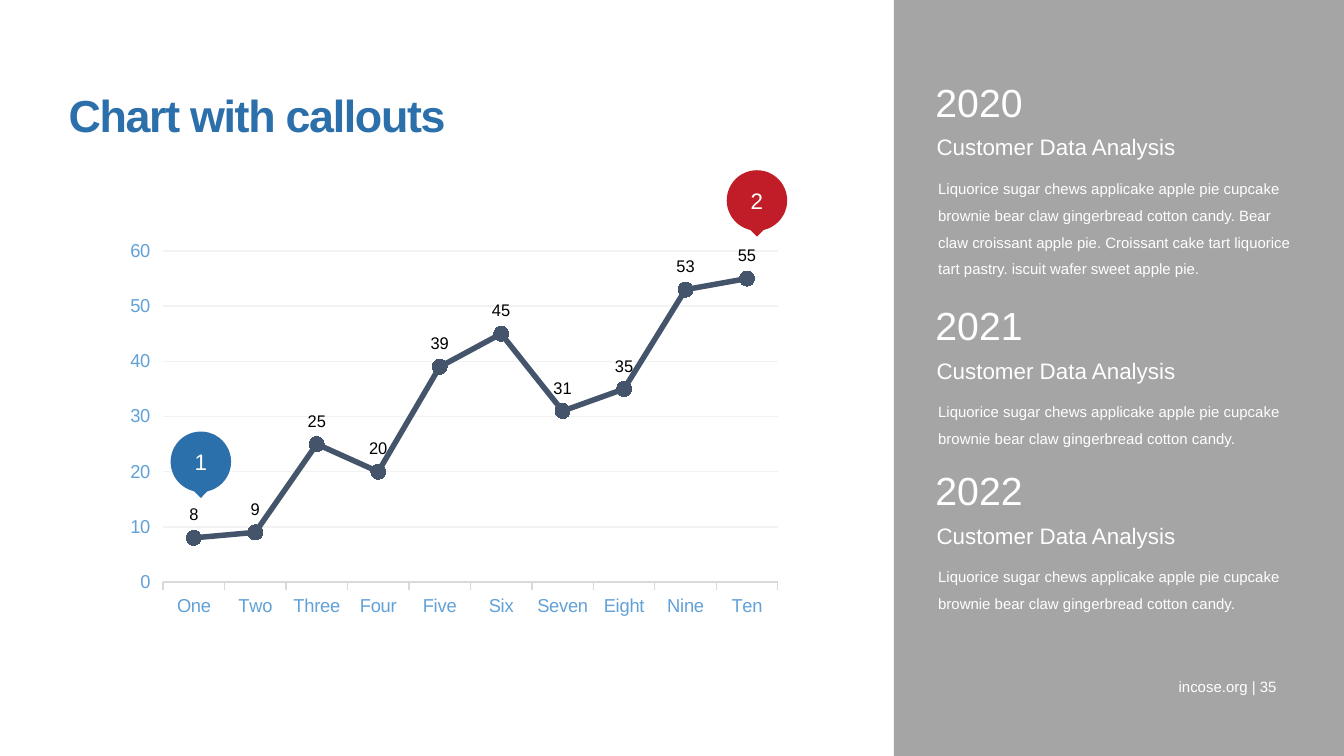
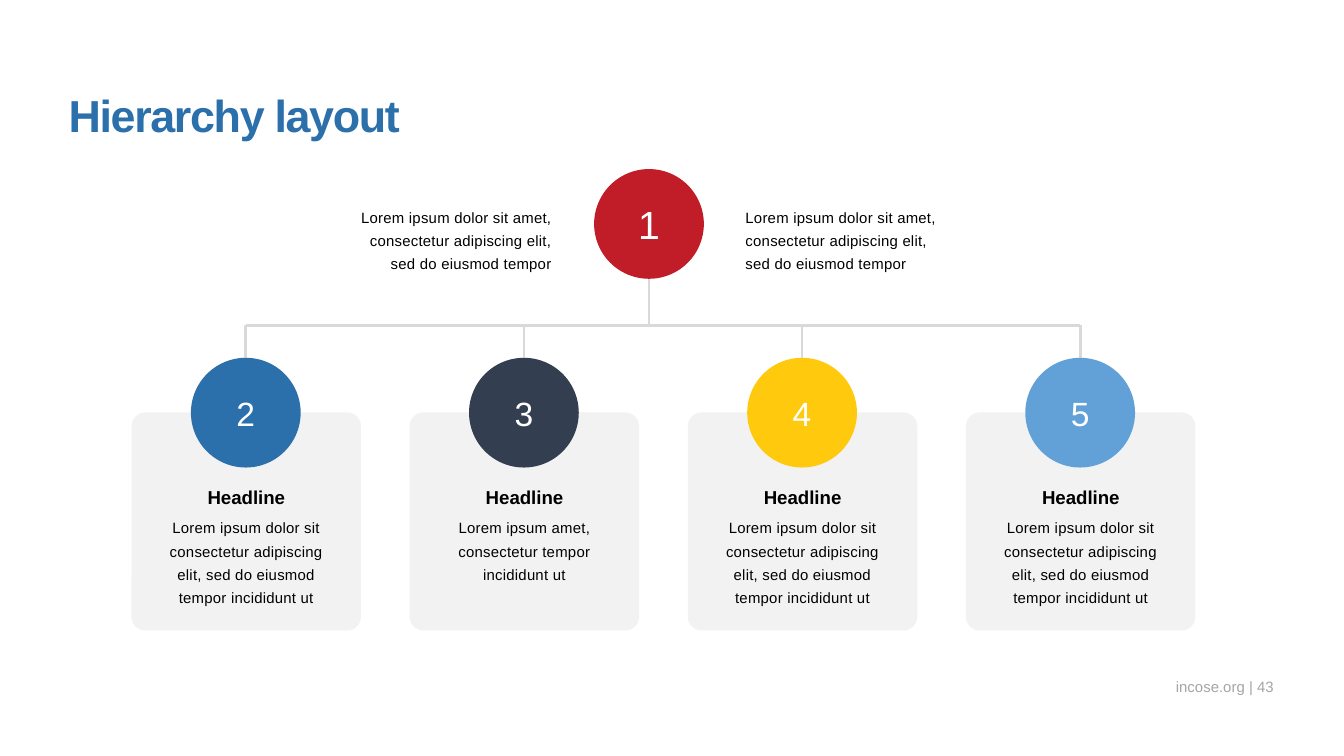
from pptx import Presentation
from pptx.chart.data import CategoryChartData
from pptx.dml.color import RGBColor
from pptx.enum.chart import XL_CHART_TYPE as ChartType
from pptx.enum.chart import XL_LABEL_POSITION as LabelPosition
from pptx.enum.chart import XL_MARKER_STYLE as MarkerStyle
from pptx.enum.chart import XL_TICK_MARK as TickMark
from pptx.enum.shapes import MSO_CONNECTOR as Connector
from pptx.enum.shapes import MSO_SHAPE as Shape
from pptx.enum.text import MSO_ANCHOR as Anchor
from pptx.enum.text import PP_ALIGN as Align
from pptx.oxml import parse_xml
from pptx.oxml.ns import nsdecls
from pptx.oxml.xmlchemy import OxmlElement
from pptx.util import Pt

FONT = "Arial"
COLORS = {
    "white": "FFFFFF", "black": "000000", "gray": "A5A5A5", "blue": "2B6FAB",
    "red": "C01D28", "yellow": "FFC90E", "sky": "61A1D7", "navy": "333F50",
    "slate": "44546A", "card": "F2F2F2", "line": "D9D9D9",
}


def rgb(name):
    return RGBColor.from_string(COLORS[name])


# Shared elements
def write(shape, text, size, color, align=Align.LEFT, anchor=Anchor.TOP,
          bold=False, line_spacing=None, tracking=None):
    frame = shape.text_frame
    frame.word_wrap = True
    frame.vertical_anchor = anchor
    frame.margin_left = frame.margin_right = 0
    frame.margin_top = frame.margin_bottom = 0
    frame.text = text
    for paragraph in frame.paragraphs:
        paragraph.alignment = align
        if line_spacing:
            paragraph.line_spacing = line_spacing
        for run in paragraph.runs:
            run.font.name = FONT
            run.font.size = Pt(size)
            run.font.bold = bold
            run.font.color.rgb = rgb(color)
            if tracking:
                run._r.get_or_add_rPr().set("spc", str(round(tracking * 100)))


def add_text(slide, left, top, width, height, text, size, color, **style):
    box = slide.shapes.add_textbox(Pt(left), Pt(top), Pt(width), Pt(height))
    write(box, text, size, color, **style)


def add_block(slide, kind, left, top, width, height, color):
    shape = slide.shapes.add_shape(kind, Pt(left), Pt(top), Pt(width), Pt(height))
    shape.shadow.inherit = False
    shape.fill.solid()
    shape.fill.fore_color.rgb = rgb(color)
    shape.line.fill.background()
    return shape


def add_circle(slide, left, top, size, color, label, label_size):
    circle = add_block(slide, Shape.OVAL, left, top, size, size, color)
    write(circle, label, label_size, "white", align=Align.CENTER,
          anchor=Anchor.MIDDLE)


def add_line(slide, x1, y1, x2, y2):
    line = slide.shapes.add_connector(Connector.STRAIGHT, Pt(x1), Pt(y1),
                                      Pt(x2), Pt(y2))
    line.line.color.rgb = rgb("line")
    line.line.width = Pt(1.5)
    line._element.spPr.append(OxmlElement("a:effectLst"))


def add_title(slide, text):
    add_text(slide, 36.7, 46.8, 647.3, 28.8, text, 24, "blue", bold=True,
             tracking=-0.7)


def add_footer(slide, page, color, right):
    width = 80
    add_text(slide, right - width, 359, width, 13.7, f"incose.org | {page}", 8,
             color, align=Align.RIGHT, anchor=Anchor.BOTTOM, line_spacing=1.5)


# Chart slide elements
def style_font(font, size, color):
    font.name = FONT
    font.size = Pt(size)
    font.color.rgb = rgb(color)


def style_line(line, color, width):
    line.color.rgb = rgb(color)
    line.width = Pt(width)


def add_line_chart(slide):
    data = CategoryChartData()
    data.categories = ["One", "Two", "Three", "Four", "Five",
                       "Six", "Seven", "Eight", "Nine", "Ten"]
    data.add_series("Series 1", [8, 9, 25, 20, 39, 45, 31, 35, 53, 55])
    chart = slide.shapes.add_chart(ChartType.LINE_MARKERS, Pt(69.8), Pt(125.3),
                                   Pt(352.1), Pt(255.6), data).chart
    chart.has_title = False
    chart.has_legend = False
    style_font(chart.font, 10, "black")

    for axis in (chart.category_axis, chart.value_axis):
        axis.major_tick_mark = TickMark.OUTSIDE
        axis.minor_tick_mark = TickMark.NONE
        style_font(axis.tick_labels.font, 10, "sky")
    style_line(chart.category_axis.format.line, "line", 0.75)
    values = chart.value_axis
    values.minimum_scale, values.maximum_scale, values.major_unit = 0, 60, 10
    values.format.line.fill.background()
    values.has_major_gridlines = True
    style_line(values.major_gridlines.format.line, "card", 0.75)

    plot = chart.plots[0]
    plot.vary_by_categories = False
    series = plot.series[0]
    series.smooth = False
    style_line(series.format.line, "slate", 3)
    marker = series.marker
    marker.style = MarkerStyle.CIRCLE
    marker.size = 8
    marker.format.fill.solid()
    marker.format.fill.fore_color.rgb = rgb("slate")
    marker.format.line.color.rgb = rgb("white")
    labels = series.data_labels
    labels.show_value = True
    labels.position = LabelPosition.ABOVE
    style_font(labels.font, 9, "black")
    place_plot(chart, x=0.03, y=0.036, w=0.955, h=0.694)


def place_plot(chart, **fractions):
    modes = "".join(f'<c:{key}Mode val="edge"/>' for key in "xy")
    sizes = "".join(f'<c:{key} val="{value}"/>' for key, value in fractions.items())
    area = chart._chartSpace.chart.plotArea
    for old in area.findall("{*}layout"):
        area.remove(old)
    area.insert(0, parse_xml(
        f'<c:layout {nsdecls("c")}><c:manualLayout><c:layoutTarget val="inner"/>'
        f'{modes}{sizes}</c:manualLayout></c:layout>'))


def add_callout(slide, left, top, color, label):
    pointer = add_block(slide, Shape.RECTANGLE, left + 10.1, top + 20.9,
                        12.2, 12.2, color)
    pointer.rotation = 45
    add_circle(slide, left, top, 32.4, color, label, 12)


def add_year(slide, top, year, height, text):
    add_text(slide, 502.6, top + 46.8, 196.6, height, text, 8, "white",
             line_spacing=1.5)
    add_text(slide, 501.8, top + 28.6, 197.3, 13.7, "Customer Data Analysis", 12,
             "white", line_spacing=0.9)
    add_text(slide, 501.1, top, 85.7, 25.2, year, 21, "white", line_spacing=0.9)


# Hierarchy slide elements
def add_card(slide, left, text):
    card = add_block(slide, Shape.ROUNDED_RECTANGLE, left, 221, 122.9, 116.8, "card")
    card.adjustments[0] = 0.063
    add_text(slide, left + 15.8, 260, 91.4, 12.2, "Headline", 10, "black",
             align=Align.CENTER, anchor=Anchor.MIDDLE, bold=True)
    add_note(slide, left + 15.8, 275.2, 91.4, 36, text, Align.CENTER)


def add_note(slide, left, top, width, height, text, align):
    add_text(slide, left, top, width, height, text, 8, "black", align=align,
             line_spacing=1.3, tracking=0.1)


def build_chart_slide(slide):
    add_block(slide, Shape.RECTANGLE, 478.8, 0, 241.2, 405, "gray")
    add_title(slide, "Chart with callouts")
    add_line_chart(slide)
    add_callout(slide, 389.3, 91.2, "red", "2")
    add_callout(slide, 91.4, 231.2, "blue", "1")

    short = ("Liquorice sugar chews applicake apple pie cupcake brownie bear claw "
             "gingerbread cotton candy.")
    long = short + (" Bear claw croissant apple pie. Croissant cake tart liquorice "
                    "tart pastry. iscuit wafer sweet apple pie.")
    add_year(slide, 44.6, "2020", 56.9, long)
    add_year(slide, 164.2, "2021", 34.6, short)
    add_year(slide, 252.7, "2022", 34.6, short)
    add_footer(slide, 35, "white", 684)


def build_hierarchy_slide(slide):
    add_footer(slide, 43, "gray", 682.5)
    add_title(slide, "Hierarchy layout")

    # Cards in equal steps, with the tree above them
    first_left, step, circle = 70.5, 149, 58.8
    ending = "consectetur adipiscing elit, sed do eiusmod tempor incididunt ut"
    full = f"Lorem ipsum dolor sit\n{ending}"
    branches = [
        ("blue", f"Lorem ipsum dolor sit {ending}"),
        ("navy", "Lorem ipsum amet,\nconsectetur tempor incididunt ut"),
        ("yellow", full),
        ("sky", full),
    ]
    lefts = [first_left + step * index for index in range(len(branches))]
    centers = [left + 61.2 for left in lefts]
    for left, (_, text) in zip(lefts, branches):
        add_card(slide, left, text)

    bar_top, root_center = 174.2, 347.7
    for center in centers:
        add_line(slide, center, 202.3, center, bar_top)
    add_line(slide, centers[0], bar_top, centers[-1], bar_top)
    add_line(slide, root_center, bar_top, root_center, 146.2)

    # Numbered circles
    add_circle(slide, root_center - circle / 2, 90.6, circle, "red", "1", 21)
    for number, (center, (color, _)) in enumerate(zip(centers, branches), 2):
        add_circle(slide, center - circle / 2, 191.7, circle, color, str(number), 18)

    # Notes beside the root
    note = "Lorem ipsum dolor sit amet,\nconsectetur adipiscing elit, sed do eiusmod tempor"
    for left, align in ((182.9, Align.RIGHT), (399.4, Align.LEFT)):
        add_note(slide, left, 108.8, 112.7, 21.6, note, align)


def main():
    presentation = Presentation()
    presentation.slide_width = Pt(720)
    presentation.slide_height = Pt(405)
    blank = presentation.slide_layouts[6]
    for build in (build_chart_slide, build_hierarchy_slide):
        build(presentation.slides.add_slide(blank))
    presentation.save("out.pptx")


if __name__ == "__main__":
    main()
